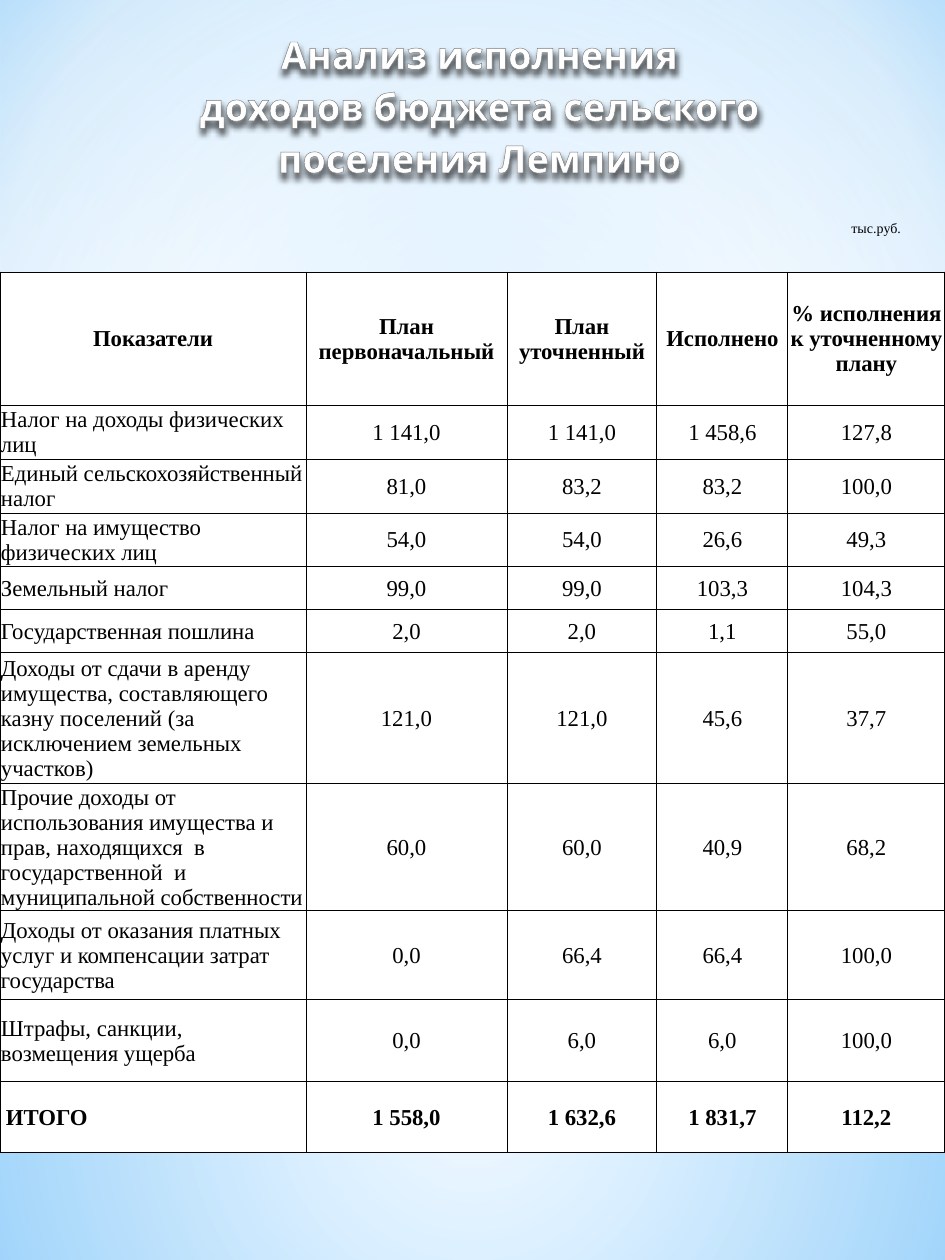
"""Build the slide on budget revenue execution of a rural settlement."""
from lxml import etree
from pptx import Presentation, util as u
from pptx.dml.color import RGBColor
from pptx.enum import shapes, text
from pptx.oxml import parse_xml
from pptx.oxml.ns import nsdecls, qn

TITLE = ["Анализ исполнения", "доходов бюджета сельского", "поселения Лемпино"]
UNIT_NOTE = "тыс.руб."
HEADERS = ["Показатели", "План первоначальный", "План уточненный", "Исполнено",
           "% исполнения к уточненному плану"]
REVENUES = [
    ("Налог на доходы физических лиц", "1 141,0", "1 141,0", "1 458,6", "127,8"),
    ("Единый сельскохозяйственный налог", "81,0", "83,2", "83,2", "100,0"),
    ("Налог на имущество физических лиц", "54,0", "54,0", "26,6", "49,3"),
    ("Земельный налог", "99,0", "99,0", "103,3", "104,3"),
    ("Государственная пошлина", "2,0", "2,0", "1,1", "55,0"),
    ("Доходы от сдачи в аренду имущества, составляющего казну поселений "
     "(за исключением земельных участков)", "121,0", "121,0", "45,6", "37,7"),
    ("Прочие доходы от использования имущества и прав, находящихся  в  государственной  и  "
     "муниципальной собственности", "60,0", "60,0", "40,9", "68,2"),
    ("Доходы от оказания платных услуг и компенсации затрат государства",
     "0,0", "66,4", "66,4", "100,0"),
    ("Штрафы, санкции, возмещения ущерба", "0,0", "6,0", "6,0", "100,0"),
]
TOTAL = ("ИТОГО", "1 558,0", "1 632,6", "1 831,7", "112,2")

THEME = {
    "ink": "000000", "paper": "FFFFFF", "sky": "B4DCFA", "outline": "7D7D7D",
    "title": {"name": "Karla", "size": u.Pt(21.6), "bold": True},
    "table": {"name": "Times New Roman", "size": u.Pt(13)},
    "note": {"name": "Times New Roman", "size": u.Pt(8)},
}
PAPER, SKY = THEME["paper"], THEME["sky"]
CENTRE = (50, 50, 50, 50)
BACKDROP = ([(0, "9ED5FF", 100), (60, PAPER, 100), (100, "5BB9FF", 100)], (20, 10, 20, 60))
TITLE_FILL = ([(0, PAPER, 100), (9, PAPER, 100), (50, "7F7F7F", 100),
               (79, PAPER, 100), (100, PAPER, 100)], None)
RECT, OVAL = shapes.MSO_SHAPE.RECTANGLE, shapes.MSO_SHAPE.OVAL
GLOWS = [
    (RECT, (0, 937, 945, 323), ([(0, PAPER, 91), (37, PAPER, 76), (100, SKY, 79)], CENTRE)),
    (RECT, (0, 0, 945, 937), ([(0, PAPER, 89), (48, PAPER, 62), (100, SKY, 79)], CENTRE)),
    (RECT, (0, 692, 945, 420), ([(0, PAPER, 0), (29, PAPER, 30), (45, SKY, 40),
                                 (55, PAPER, 26), (65, SKY, 60), (100, PAPER, 0)], None)),
    (OVAL, (0, 294, 945, 937), ([(0, PAPER, 100), (56, PAPER, 0)], CENTRE)),
]
SLIDE = (945, 1260)
TITLE_BOX = (45, 25, 863, 179)
NOTE_BOX = (839, 213, 96, 30)
TABLE_TOP = 272
COLUMNS = [306, 201, 150, 131, 157]
ROWS = [133, 54, 54, 53, 44, 43, 131, 127, 89, 82, 71]


def px(length):
    return round(length * 914400 / 126)


def box(lengths):
    return [px(length) for length in lengths]


def apply(target, values):
    for key, value in values.items():
        setattr(target, key, value)


def style(run, look, **extra):
    apply(run.font, {**look, **extra})
    run.font.color.rgb = RGBColor.from_string(THEME["ink"])


def paint_gradient(fill, owner, gradient):
    stops, focus = gradient
    fill.gradient()
    grad = next(owner.iter(qn("a:gradFill")))
    for child in list(grad):
        grad.remove(child)
    stop_list = etree.SubElement(grad, qn("a:gsLst"))
    for position, colour, opacity in stops:
        stop = etree.SubElement(stop_list, qn("a:gs"), pos=str(position * 1000))
        tint = etree.SubElement(stop, qn("a:srgbClr"), val=colour)
        if opacity < 100:
            etree.SubElement(tint, qn("a:alpha"), val=str(opacity * 1000))
    if focus:
        route = etree.SubElement(grad, qn("a:path"), {"path": "circle"})
        sides = {side: str(share * 1000) for side, share in zip("ltrb", focus)}
        etree.SubElement(route, qn("a:fillToRect"), sides)
    else:
        etree.SubElement(grad, qn("a:lin"), ang="5400000", scaled="0")


def line_xml(tag, width, colour):
    return parse_xml(f'<a:{tag} {nsdecls("a")} w="{width}"><a:solidFill>'
                     f'<a:srgbClr val="{colour}"/></a:solidFill></a:{tag}>')


def add_backdrop(slide):
    paint_gradient(slide.background.fill, slide.element, BACKDROP)
    for kind, place, gradient in GLOWS:
        glow = slide.shapes.add_shape(kind, *box(place))
        glow.shadow.inherit = False
        glow.line.fill.background()
        paint_gradient(glow.fill, glow.element, gradient)


def add_title(slide):
    title = slide.shapes.title
    apply(title, dict(zip(("left", "top", "width", "height"), box(TITLE_BOX))))
    frame = title.text_frame
    apply(frame, {"text": "\n".join(TITLE), "word_wrap": True,
                  "auto_size": text.MSO_AUTO_SIZE.NONE,
                  "vertical_anchor": text.MSO_ANCHOR.TOP})
    for paragraph in frame.paragraphs:
        apply(paragraph, {"alignment": text.PP_ALIGN.CENTER,
                          "space_before": u.Pt(0.7), "space_after": u.Pt(3)})
        paragraph._p.get_or_add_pPr().set("marL", str(px(6)))
        run = paragraph.runs[0]
        apply(run.font, THEME["title"])
        paint_gradient(run.font.fill, run._r, TITLE_FILL)
        run._r.get_or_add_rPr().insert(0, line_xml("ln", u.Pt(0.83), THEME["outline"]))
    title.element.spPr.append(parse_xml(
        f'<a:effectLst {nsdecls("a")}><a:outerShdw blurRad="38100" dist="38100" dir="5400000">'
        f'<a:srgbClr val="{THEME["ink"]}"><a:alpha val="60000"/></a:srgbClr>'
        '</a:outerShdw></a:effectLst>'))


def add_note(slide):
    note = slide.shapes.add_textbox(*box(NOTE_BOX)).text_frame
    apply(note, {"word_wrap": True, "text": UNIT_NOTE})
    style(note.paragraphs[0].runs[0], THEME["note"])


def add_revenue_table(slide):
    records = [HEADERS, *REVENUES, TOTAL]
    place = box((0, TABLE_TOP, sum(COLUMNS), sum(ROWS)))
    table = slide.shapes.add_table(len(records), len(COLUMNS), *place).table
    apply(table, {"first_row": False, "horz_banding": False})
    for column, width in zip(table.columns, COLUMNS):
        column.width = px(width)
    for row, height in zip(table.rows, ROWS):
        row.height = px(height)
    for i, record in enumerate(records):
        for j, entry in enumerate(record):
            cell = table.cell(i, j)
            indent = 6 if entry == TOTAL[0] else 1
            apply(cell, {"text": entry, "vertical_anchor": text.MSO_ANCHOR.MIDDLE,
                         "margin_left": px(indent), "margin_top": px(1),
                         "margin_right": px(1), "margin_bottom": 0})
            cell.fill.solid()
            cell.fill.fore_color.rgb = RGBColor.from_string(PAPER)
            for k, side in enumerate("LRTB"):
                edge = line_xml(f"ln{side}", u.Pt(0.5), THEME["ink"])
                cell._tc.get_or_add_tcPr().insert(k, edge)
            paragraph = cell.text_frame.paragraphs[0]
            centred = i == 0 or j > 0
            paragraph.alignment = text.PP_ALIGN.CENTER if centred else text.PP_ALIGN.LEFT
            style(paragraph.runs[0], THEME["table"], bold=record in (HEADERS, TOTAL))


def main():
    deck = Presentation()
    deck.slide_width, deck.slide_height = box(SLIDE)
    slide = deck.slides.add_slide(deck.slide_layouts[5])
    add_backdrop(slide)
    add_title(slide)
    add_revenue_table(slide)
    add_note(slide)
    slide.shapes._spTree.append(slide.shapes.title.element)
    deck.save("out.pptx")


if __name__ == "__main__":
    main()
